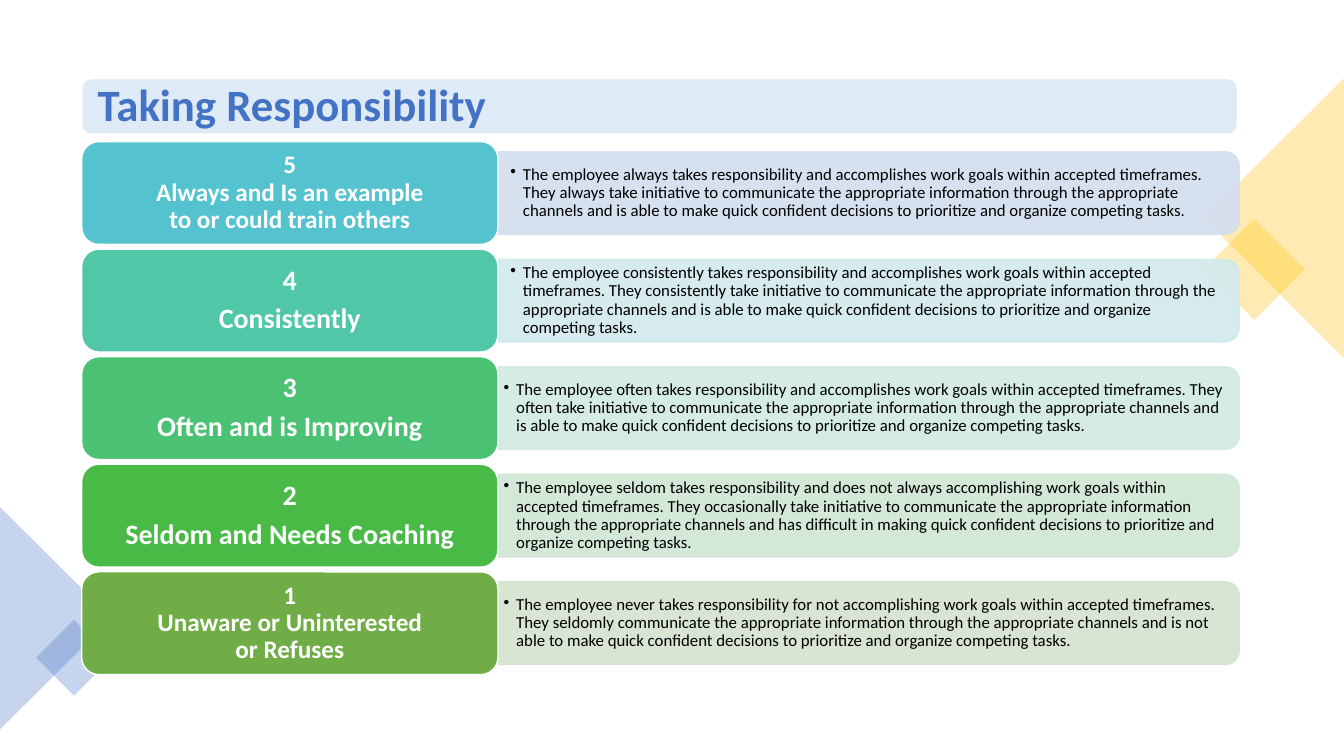
"""Build the slide on levels of taking responsibility."""
from lxml import etree
from pptx import Presentation
from pptx.dml.color import RGBColor
from pptx.enum.shapes import MSO_SHAPE
from pptx.enum.text import MSO_ANCHOR, MSO_AUTO_SIZE, PP_ALIGN
from pptx.oxml.ns import qn
from pptx.util import Cm, Pt

RECT = MSO_SHAPE.RECTANGLE
PEAK = MSO_SHAPE.ISOSCELES_TRIANGLE
ROUND = MSO_SHAPE.ROUNDED_RECTANGLE
TAB = MSO_SHAPE.ROUND_2_SAME_RECTANGLE
MIDDLE = MSO_ANCHOR.MIDDLE
FIXED = MSO_AUTO_SIZE.NONE
LEFT, CENTER = PP_ALIGN.LEFT, PP_ALIGN.CENTER

LEVELS = [
    ("55C3CF", "D2DEEF", 18, 0, 0.3,
     ["5", "Always and Is an example", "to or could train others"],
     "The employee always takes responsibility and accomplishes work goals "
     "within accepted timeframes. They always take initiative to communicate "
     "the appropriate information through the appropriate channels and is able "
     "to make quick confident decisions to prioritize and organize competing tasks."),
    ("50C8A7", "D1E9ED", 20, 6, 0.3,
     ["4", "Consistently"],
     "The employee consistently takes responsibility and accomplishes work goals "
     "within accepted timeframes. They consistently take initiative to communicate "
     "the appropriate information through the appropriate channels and is able "
     "to make quick confident decisions to prioritize and organize competing tasks."),
    ("4BC174", "D0EAE1", 20, 6, 0.13,
     ["3", "Often and is Improving"],
     "The employee often takes responsibility and accomplishes work goals "
     "within accepted timeframes. They often take initiative to communicate "
     "the appropriate information through the appropriate channels and is able "
     "to make quick confident decisions to prioritize and organize competing tasks."),
    ("4ABA46", "D0E6D4", 20, 6, 0.13,
     ["2", "Seldom and Needs Coaching"],
     "The employee seldom takes responsibility and does not always accomplishing "
     "work goals within accepted timeframes. They occasionally take initiative to "
     "communicate the appropriate information through the appropriate channels and "
     "has difficult in making quick confident decisions to prioritize and organize "
     "competing tasks."),
    ("70AD47", "D5E3CF", 18, 0, 0.13,
     ["1", "Unaware or Uninterested", "or Refuses"],
     "The employee never takes responsibility for not accomplishing work goals "
     "within accepted timeframes. They seldomly communicate the appropriate "
     "information through the appropriate channels and is not able to make quick "
     "confident decisions to prioritize and organize competing tasks."),
]

deck = Presentation()
deck.slide_width, deck.slide_height = Cm(33.87), Cm(19.05)
slide = deck.slides.add_slide(deck.slide_layouts[5])
shapes = slide.shapes


def draw(kind, box, fill, edge=None, turn=0, alpha=100):
    shape = shapes.add_shape(kind, *map(Cm, box))
    shape.shadow.inherit = False
    shape.rotation = turn
    shape.fill.solid()
    shape.fill.fore_color.rgb = RGBColor.from_string(fill)
    if edge:
        shape.line.width = Pt(1)
        shape.line.color.rgb = RGBColor.from_string(edge)
    else:
        shape.line.fill.background()
    if alpha < 100:
        for tone in shape.element.iter(qn("a:srgbClr")):
            etree.SubElement(tone, qn("a:alpha"), val=str(alpha * 1000))
    return shape


def write(frame, lines, size, tone, pad, align=LEFT, bold=True, after=0):
    frame.word_wrap, frame.auto_size = True, FIXED
    frame.vertical_anchor = MIDDLE
    frame.margin_left = frame.margin_right = Cm(pad)
    frame.margin_top = frame.margin_bottom = Cm(pad / 2)
    for n, line in enumerate(lines):
        para = frame.add_paragraph() if n else frame.paragraphs[0]
        para.alignment, para.line_spacing = align, 0.9
        para.space_before, para.space_after = Pt(0), Pt(after)
        run = para.add_run()
        run.text = line
        font = run.font
        font.name, font.size, font.bold = "Calibri", Pt(size), bold
        font.color.rgb = RGBColor.from_string(tone)


for kind, box, turn, fill in [
    (RECT, (30.71, 5.89, 1.8, 1.8), 45, "FFC000"),
    (PEAK, (28.58, 3.73, 7.04, 3.53), 270, "FFC000"),
    (PEAK, (-1.4, 14.17, 5.61, 2.82), 90, "4472C4"),
    (RECT, (1.19, 15.9, 1.35, 1.35), 45, "4472C4"),
]:
    draw(kind, box, fill, turn=turn, alpha=30)

left = 2.06
bar = draw(ROUND, (left, 1.98, 29.13, 1.4), "DEEBF7", "FFFFFF")
title = shapes.title
title.left, title.top, title.width, title.height = map(Cm, (2.13, 2.06, 29.01, 1.27))
write(title.text_frame, ["Taking Responsibility"], 32, "4472C4", 0.33)
bar.element.addnext(title.element)

first, pitch = 3.57, 2.71
wide, high = 10.49, 2.59
start, span, deep = 12.56, 18.67, 2.08
for n, (fill, pale, size, after, pad, label, detail) in enumerate(LEVELS):
    top = first + n * pitch
    inner = top + (high - deep) / 2
    shift = (span - deep) / 2
    draw(TAB, (start + shift, inner - shift, deep, span), pale, pale, 90, 90)

    note = shapes.add_textbox(Cm(start), Cm(inner), Cm(18.58), Cm(deep))
    write(note.text_frame, [detail], 12, "000000", pad, bold=False)
    para = note.text_frame.paragraphs[0]
    para.level = 1
    props = para._p.get_or_add_pPr()
    props.set("marL", str(Cm(0.32)))
    props.set("indent", str(Cm(-0.32)))
    etree.SubElement(props, qn("a:buChar"), char="•")

    card = draw(ROUND, (left, top, wide, high), fill, "FFFFFF")
    write(card.text_frame, label, size, "FFFFFF", 0.2, CENTER, after=after)

deck.save("out.pptx")
